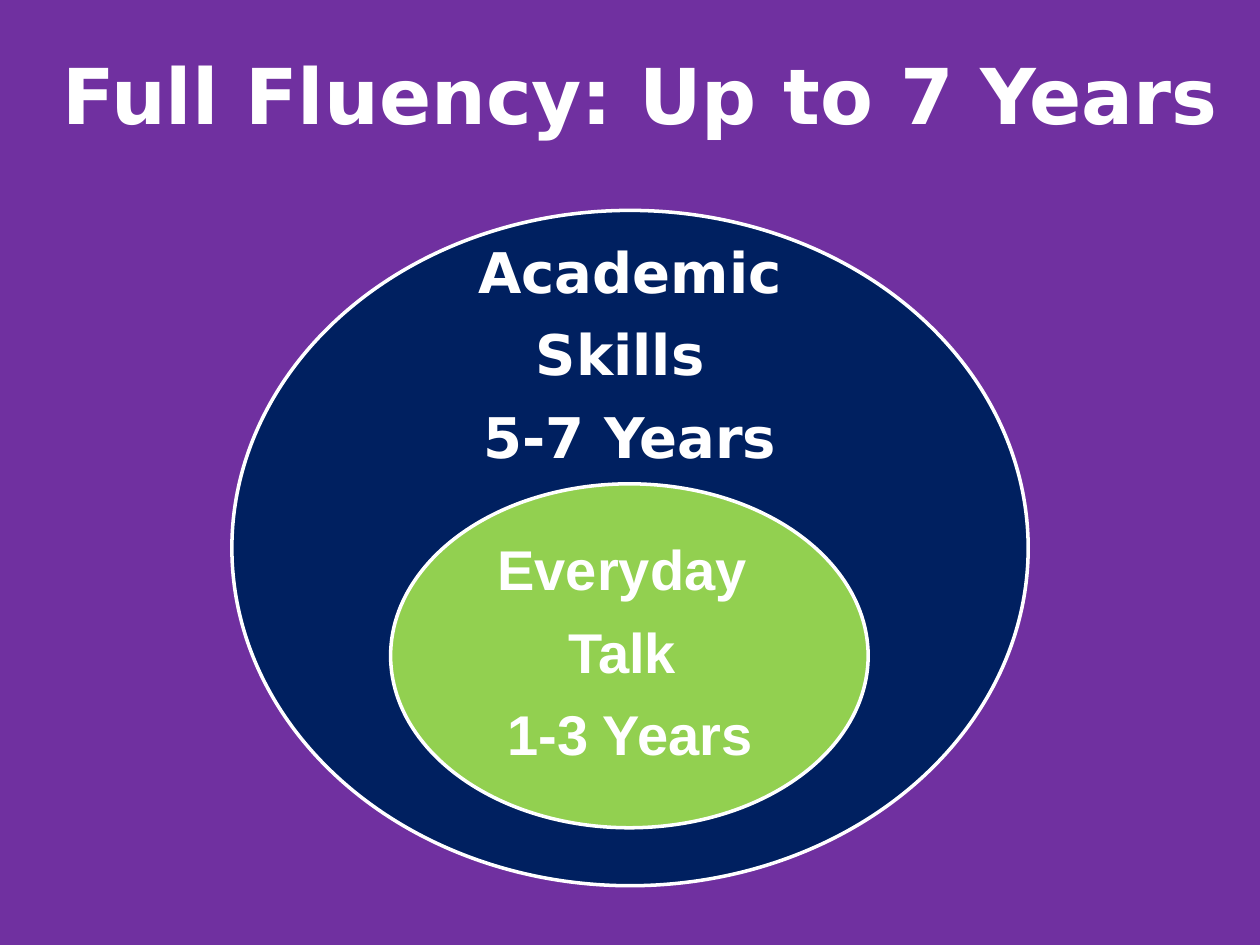
"""Build a slide of nested ellipses showing the years needed for full fluency."""
from pptx import Presentation
from pptx.dml.color import RGBColor
from pptx.enum.shapes import MSO_SHAPE
from pptx.enum.text import MSO_ANCHOR, PP_ALIGN
from pptx.util import Inches, Pt

COLORS = {"background": "7030A0", "academic": "002060", "everyday": "92D050", "white": "FFFFFF"}


def rgb(name):
    return RGBColor.from_string(COLORS[name])


def add_ellipse(slide, box, fill):
    s = slide.shapes.add_shape(MSO_SHAPE.OVAL, *map(Inches, box))
    s.shadow.inherit = False
    s.fill.solid()
    s.fill.fore_color.rgb = rgb(fill)
    s.line.color.rgb = rgb("white")
    s.line.width = Pt(2)


def add_text(slide, box, lines, font, size):
    tf = slide.shapes.add_textbox(*map(Inches, box)).text_frame
    tf.word_wrap = True
    for i, line in enumerate(lines):
        p = tf.paragraphs[0] if i == 0 else tf.add_paragraph()
        p.alignment = PP_ALIGN.CENTER
        r = p.add_run()
        r.text = line
        r.font.name = font
        r.font.size = Pt(size)
        r.font.bold = True
        r.font.color.rgb = rgb("white")
    return tf


def add_label(slide, box, lines, font):
    tf = add_text(slide, box, lines, font, 32)
    tf.vertical_anchor = MSO_ANCHOR.MIDDLE
    tf.margin_left = tf.margin_right = tf.margin_top = tf.margin_bottom = Inches(0.25)
    for p in tf.paragraphs:
        p.line_spacing = 0.9
        p.space_after = Pt(12.5)


def main():
    prs = Presentation()
    prs.slide_width, prs.slide_height = Inches(10), Inches(7.5)
    slide = prs.slides.add_slide(prs.slide_layouts[6])
    slide.background.fill.solid()
    slide.background.fill.fore_color.rgb = rgb("background")

    add_text(slide, (0.17, 0.33, 9.83, 0.84), ["Full Fluency: Up to 7 Years"], "DejaVu Sans", 44)
    add_ellipse(slide, (1.84, 1.67, 6.32, 5.36), "academic")
    add_label(slide, (3.34, 2.07, 3.32, 1.54), ["Academic", "Skills ", "5-7 Years"], "DejaVu Sans")
    add_ellipse(slide, (3.1, 3.84, 3.79, 2.73), "everyday")
    add_label(slide, (3.66, 4.52, 2.68, 1.36), ["Everyday ", "Talk ", "1-3 Years"], "Arial")
    prs.save("out.pptx")


if __name__ == "__main__":
    main()
